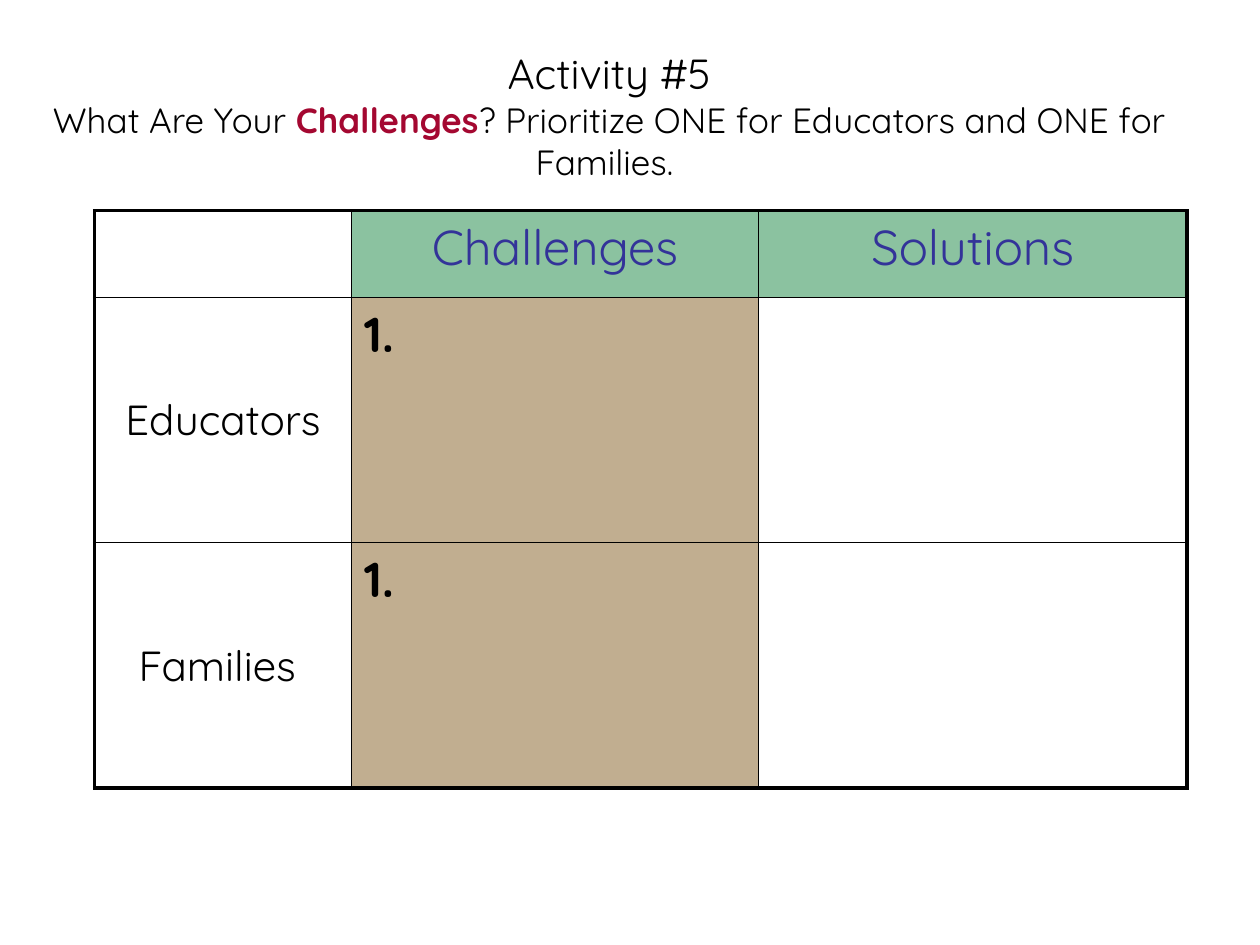
from dataclasses import dataclass

from lxml.etree import SubElement
from pptx import Presentation
from pptx.dml.color import RGBColor
from pptx.enum.text import MSO_ANCHOR, MSO_AUTO_SIZE, PP_ALIGN
from pptx.oxml.ns import qn
from pptx.util import Inches, Pt


@dataclass(frozen=True)
class Theme:
    font: str = "Quicksand"
    ink: str = "000000"
    accent: str = "A40831"
    header_text: str = "333399"
    header_fill: str = "8BC2A0"
    challenge_fill: str = "C1AE90"
    large: int = 28
    medium: int = 24
    small: int = 20
    outer_line: float = 2.25
    inner_line: float = 1


@dataclass(frozen=True)
class CellStyle:
    size: int
    color: str
    fill: str | None = None
    bold: bool = False
    align: PP_ALIGN = PP_ALIGN.CENTER
    anchor: MSO_ANCHOR = MSO_ANCHOR.TOP


class SlideBuilder:
    def __init__(self, presentation, theme):
        self.theme = theme
        self.width = presentation.slide_width
        self.height = presentation.slide_height
        self.slide = presentation.slides.add_slide(presentation.slide_layouts[5])

    def place(self, left, top, width, height):
        """Turn shares of the slide into lengths."""
        return (int(left * self.width), int(top * self.height),
                int(width * self.width), int(height * self.height))

    def style_font(self, font, size, color, bold=False):
        font.name = self.theme.font
        font.size = Pt(size)
        font.bold = bold
        font.color.rgb = RGBColor.from_string(color)

    def title(self, box, lines):
        shape = self.slide.shapes.title
        shape.left, shape.top, shape.width, shape.height = self.place(*box)
        frame = shape.text_frame
        frame.word_wrap = True
        frame.auto_size = MSO_AUTO_SIZE.NONE
        frame.vertical_anchor = MSO_ANCHOR.TOP
        paragraph = frame.paragraphs[0]
        paragraph.alignment = PP_ALIGN.CENTER
        for index, (size, runs) in enumerate(lines):
            if index:
                paragraph.add_line_break()
            for text, color, bold in runs:
                run = paragraph.add_run()
                run.text = text
                self.style_font(run.font, size, color, bold)

    def table(self, box, column_shares, row_shares, rows, style_for):
        left, top, width, height = self.place(*box)
        row_count, column_count = len(row_shares), len(column_shares)
        table = self.slide.shapes.add_table(
            row_count, column_count, left, top, width, height).table
        table.first_row = table.horz_banding = False
        for column, share in zip(table.columns, column_shares):
            column.width = int(width * share / sum(column_shares))
        for row, share in zip(table.rows, row_shares):
            row.height = int(height * share / sum(row_shares))
        for r, texts in enumerate(rows):
            for c, text in enumerate(texts):
                cell = table.cell(r, c)
                outer_edges = {"lnL": c == 0, "lnR": c == column_count - 1,
                               "lnT": r == 0, "lnB": r == row_count - 1}
                self.borders(cell, outer_edges)
                self.cell(cell, text, style_for(r, c))

    def cell(self, cell, text, style):
        if style.fill:
            cell.fill.solid()
            cell.fill.fore_color.rgb = RGBColor.from_string(style.fill)
        else:
            cell.fill.background()
        cell.vertical_anchor = style.anchor
        cell.text = text
        paragraph = cell.text_frame.paragraphs[0]
        paragraph.alignment = style.align
        self.style_font(paragraph.font, style.size, style.color, style.bold)

    def borders(self, cell, outer_edges):
        properties = cell._tc.get_or_add_tcPr()
        for edge, is_outer in outer_edges.items():
            points = self.theme.outer_line if is_outer else self.theme.inner_line
            line = SubElement(properties, qn(f"a:{edge}"), w=str(Pt(points)))
            fill = SubElement(line, qn("a:solidFill"))
            SubElement(fill, qn("a:srgbClr"), val=self.theme.ink)


def main():
    presentation = Presentation()
    presentation.slide_width, presentation.slide_height = Inches(10), Inches(7.5)
    theme = Theme()
    builder = SlideBuilder(presentation, theme)

    # Title with the key word highlighted
    builder.title((0.017, 0.044, 0.933, 0.21), [
        (theme.medium, [("Activity #5", theme.ink, False)]),
        (theme.small, [
            ("What Are Your ", theme.ink, False),
            ("Challenges", theme.accent, True),
            ("? Prioritize ONE for Educators and ONE for Families. ",
             theme.ink, False),
        ]),
    ])

    # Worksheet table: one row per group
    header = CellStyle(theme.large, theme.header_text, theme.header_fill)
    group = CellStyle(theme.medium, theme.ink, anchor=MSO_ANCHOR.MIDDLE)
    challenge = CellStyle(theme.large, theme.ink, theme.challenge_fill,
                          bold=True, align=PP_ALIGN.LEFT)
    blank = CellStyle(theme.medium, theme.ink)

    def style_for(row, column):
        if row == 0:
            return header if column else blank
        return (group, challenge, blank)[column]

    builder.table(
        (0.075, 0.223, 0.867, 0.611), (2.04, 3.23, 3.4), (0.69, 1.95, 1.95),
        [("", "Challenges", "Solutions"),
         ("Educators", "1.", ""),
         ("Families ", "1.", "")],
        style_for)

    presentation.save("out.pptx")


if __name__ == "__main__":
    main()
